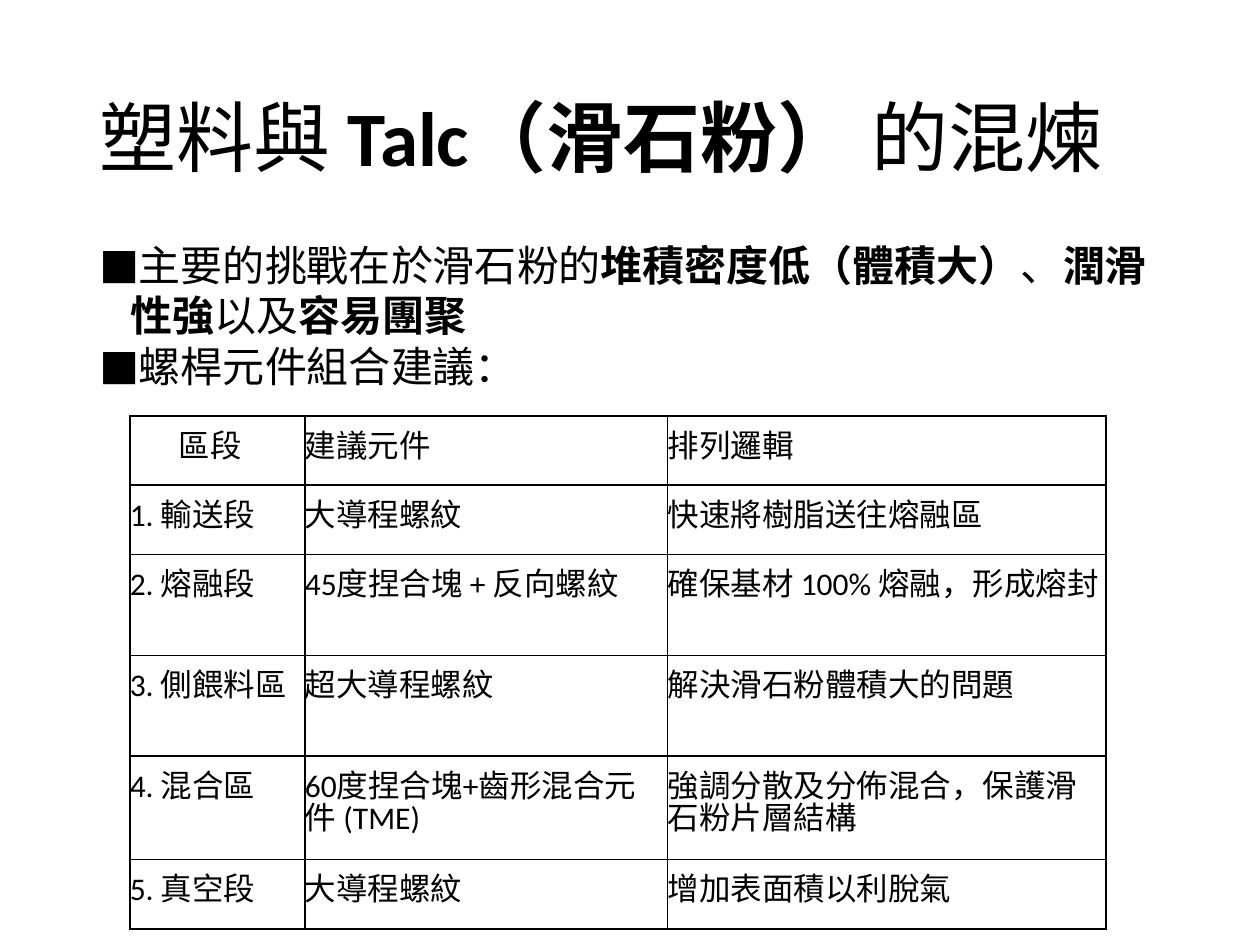
from dataclasses import dataclass

import pptx
import pptx.dml.color
import pptx.enum.text
import pptx.oxml
import pptx.oxml.ns
import pptx.util
from pptx.util import Inches

COLORS = {"text": "000000", "border": "000000"}
FONT = "Calibri"
COLUMN_WIDTHS = (1.39, 2.88, 3.48)
ROW_HEIGHTS = (0.55, 0.55, 0.55, 0.55, 0.82, 0.55)
MIXING_ROW = 4


@dataclass
class Span:
    text: str
    bold: bool = False


@dataclass
class TextBlock:
    top: float
    height: float
    size: int
    paragraphs: list[list[Span]]
    line_spacing: float = 1.0
    anchor: pptx.enum.text.MSO_ANCHOR = pptx.enum.text.MSO_ANCHOR.TOP
    bullet: str = ""


TITLE = TextBlock(
    0.4, 1.45, 44,
    [[Span("塑料與 "), Span("Talc（滑石粉）", True), Span(" 的混煉")]],
    line_spacing=0.9, anchor=pptx.enum.text.MSO_ANCHOR.MIDDLE,
)
CHALLENGES = TextBlock(
    1.85, 1.52, 24,
    [
        [Span("主要的挑戰在於滑石粉的"), Span("堆積密度低（體積大）", True), Span("、"),
         Span("潤滑性強", True), Span("以及"), Span("容易團聚", True)],
        [Span("螺桿元件組合建議：")],
    ],
    bullet="■",
)
SCREW_SECTIONS = (
    ("區段", "建議元件", "排列邏輯"),
    ("1. 輸送段", "大導程螺紋", "快速將樹脂送往熔融區"),
    ("2. 熔融段", "45度捏合塊 + 反向螺紋", "確保基材 100% 熔融，形成熔封"),
    ("3. 側餵料區", "超大導程螺紋", "解決滑石粉體積大的問題"),
    ("4. 混合區", "60度捏合塊+齒形混合元件 (TME)", "強調分散及分佈混合，保護滑石粉片層結構"),
    ("5. 真空段", "大導程螺紋", "增加表面積以利脫氣"),
)


def set_font(paragraph, size: int) -> None:
    """Apply the shared typeface and colour to a paragraph."""
    paragraph.font.name = FONT
    paragraph.font.size = pptx.util.Pt(size)
    paragraph.font.color.rgb = pptx.dml.color.RGBColor.from_string(COLORS["text"])


def add_bullet(paragraph, character: str) -> None:
    """Give a paragraph a hanging bullet."""
    properties = paragraph._p.get_or_add_pPr()
    properties.set("marL", str(Inches(0.25)))
    properties.set("indent", str(Inches(-0.25)))
    namespace = pptx.oxml.ns.nsdecls("a")
    properties.append(pptx.oxml.parse_xml(f'<a:buFont {namespace} typeface="{FONT}"/>'))
    properties.append(pptx.oxml.parse_xml(f'<a:buChar {namespace} char="{character}"/>'))


def add_text_block(slide, block: TextBlock) -> None:
    """Draw a text box with mixed bold and regular spans."""
    shape = slide.shapes.add_textbox(
        Inches(0.69), Inches(block.top), Inches(8.62), Inches(block.height))
    frame = shape.text_frame
    frame.word_wrap = True
    frame.vertical_anchor = block.anchor
    for index, spans in enumerate(block.paragraphs):
        paragraph = frame.add_paragraph() if index else frame.paragraphs[0]
        paragraph.line_spacing = block.line_spacing
        if block.bullet:
            add_bullet(paragraph, block.bullet)
        set_font(paragraph, block.size)
        for span in spans:
            run = paragraph.add_run()
            run.text = span.text
            run.font.bold = span.bold


def add_borders(cell) -> None:
    """Outline all four sides of a cell."""
    properties = cell._tc.get_or_add_tcPr()
    for index, side in enumerate(("lnL", "lnR", "lnT", "lnB")):
        properties.insert(index, pptx.oxml.parse_xml(
            f'<a:{side} {pptx.oxml.ns.nsdecls("a")} w="{pptx.util.Pt(1)}"><a:solidFill>'
            f'<a:srgbClr val="{COLORS["border"]}"/></a:solidFill></a:{side}>'))


def fill_cell(cell, text: str, right_margin: float, space_after: int, centered: bool) -> None:
    """Write and format one table cell."""
    cell.fill.background()
    add_borders(cell)
    cell.margin_left = Inches(0)
    cell.margin_right = Inches(right_margin)
    cell.margin_top = cell.margin_bottom = Inches(0.15)
    cell.text = text
    paragraph = cell.text_frame.paragraphs[0]
    paragraph.line_spacing = pptx.util.Pt(18)
    paragraph.space_after = pptx.util.Pt(space_after)
    if centered:
        paragraph.alignment = pptx.enum.text.PP_ALIGN.CENTER
    set_font(paragraph, 18)


def add_section_table(slide) -> None:
    """Draw the table of screw sections."""
    table = slide.shapes.add_table(
        len(ROW_HEIGHTS), len(COLUMN_WIDTHS), Inches(1.03), Inches(3.3),
        Inches(sum(COLUMN_WIDTHS)), Inches(sum(ROW_HEIGHTS))).table
    table.first_row = False
    table.horz_banding = False
    for column, width in zip(table.columns, COLUMN_WIDTHS):
        column.width = Inches(width)
    for row, height in zip(table.rows, ROW_HEIGHTS):
        row.height = Inches(height)
    last_column = len(COLUMN_WIDTHS) - 1
    for row_index, texts in enumerate(SCREW_SECTIONS):
        for column_index, text in enumerate(texts):
            fill_cell(
                table.cell(row_index, column_index), text,
                right_margin=0 if column_index == last_column else 0.11,
                space_after=0 if row_index == MIXING_ROW else 12,
                centered=row_index == column_index == 0)


def main() -> None:
    """Build and save the talc compounding slide."""
    presentation = pptx.Presentation()
    presentation.slide_width = Inches(10)
    presentation.slide_height = Inches(7.5)
    slide = presentation.slides.add_slide(presentation.slide_layouts[6])
    add_text_block(slide, TITLE)
    add_text_block(slide, CHALLENGES)
    add_section_table(slide)
    presentation.save("out.pptx")


if __name__ == "__main__":
    main()
